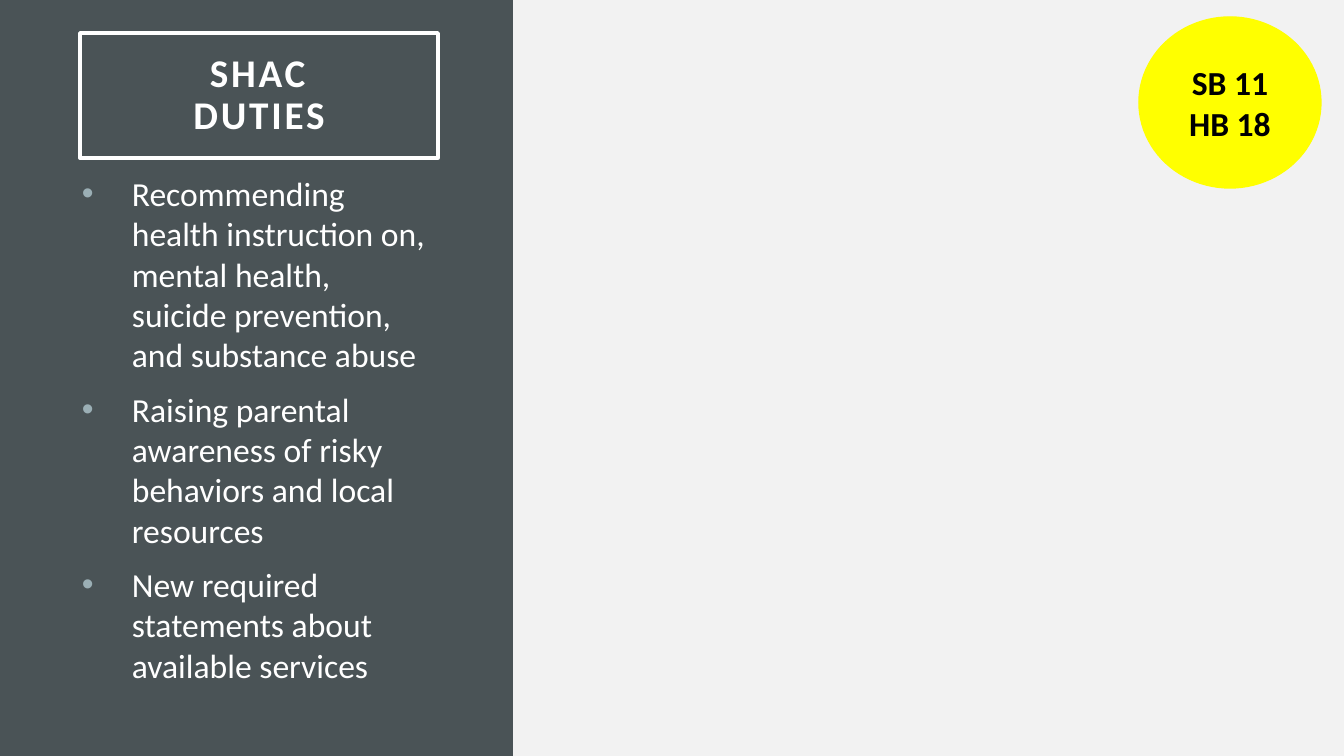
import dataclasses

import pptx
import pptx.dml.color
import pptx.enum.shapes
import pptx.enum.text
import pptx.oxml
import pptx.oxml.ns
import pptx.util

EMU_PER_PX = 914400 / 100.8
SHAPES = pptx.enum.shapes.MSO_SHAPE


def px(length):
    return pptx.util.Emu(round(length * EMU_PER_PX))


@dataclasses.dataclass(frozen=True)
class Theme:
    font: str = "Calibri"
    page: str = "F2F2F2"
    panel: str = "4A5356"
    light: str = "FFFFFF"
    dark: str = "000000"
    bullet: str = "9BAFB5"
    badge: str = "FFFF00"
    title_size: int = 28
    body_size: int = 24


class SlideBuilder:
    """Draws themed elements on the current slide."""

    def __init__(self, deck, theme):
        self.theme = theme
        self.page = deck.slides.add_slide(deck.slide_layouts[6])
        self.paint(self.page.background.fill, theme.page)

    def paint(self, fill, color):
        fill.solid()
        fill.fore_color.rgb = pptx.dml.color.RGBColor.from_string(color)

    def shape(self, kind, bounds, fill=None, line=None, weight=1):
        shape = self.page.shapes.add_shape(kind, *map(px, bounds))
        shape.shadow.inherit = False
        if fill:
            self.paint(shape.fill, fill)
        else:
            shape.fill.background()
        if line:
            self.paint(shape.line.fill, line)
            shape.line.width = pptx.util.Pt(weight)
        else:
            shape.line.fill.background()
        return shape

    def span(self, para, text, size, color, bold=False, spacing=0):
        span = para.add_run()
        span.text = text
        span.font.name = self.theme.font
        span.font.size = pptx.util.Pt(size)
        span.font.bold = bold
        span.font.color.rgb = pptx.dml.color.RGBColor.from_string(color)
        if spacing:
            span.font._element.set("spc", str(spacing * 100))

    def paragraphs(self, frame, count):
        return [frame.paragraphs[0]] + [frame.add_paragraph() for _ in range(count - 1)]

    def center(self, frame, count):
        frame.word_wrap = True
        frame.vertical_anchor = pptx.enum.text.MSO_ANCHOR.MIDDLE
        paras = self.paragraphs(frame, count)
        for para in paras:
            para.alignment = pptx.enum.text.PP_ALIGN.CENTER
        return paras

    def title(self, bounds, lines):
        theme = self.theme
        frame = self.shape(SHAPES.RECTANGLE, bounds, line=theme.light, weight=2.5).text_frame
        frame.margin_left = frame.margin_right = px(20)
        frame.margin_top = frame.margin_bottom = px(20)
        para = self.center(frame, 1)[0]
        para.line_spacing = 0.9
        for index, line in enumerate(lines):
            if index:
                para.add_line_break()
            self.span(para, line, theme.title_size, theme.light, bold=True, spacing=2)

    def badge(self, bounds, lines):
        theme = self.theme
        frame = self.shape(SHAPES.OVAL, bounds, theme.badge, theme.badge).text_frame
        for para, line in zip(self.center(frame, len(lines)), lines):
            self.span(para, line, theme.body_size, theme.dark, bold=True)

    def bullets(self, bounds, items, indent):
        theme = self.theme
        frame = self.page.shapes.add_textbox(*map(px, bounds)).text_frame
        frame.word_wrap = True
        for index, (para, item) in enumerate(zip(self.paragraphs(frame, len(items)), items)):
            properties = para._p.get_or_add_pPr()
            properties.set("marL", str(px(indent)))
            properties.set("indent", str(-px(indent)))
            namespace = pptx.oxml.ns.nsdecls("a")
            for markup in (
                f'<a:buClr {namespace}><a:srgbClr val="{theme.bullet}"/></a:buClr>',
                f'<a:buFont {namespace} typeface="Arial"/>',
                f'<a:buChar {namespace} char="•"/>',
            ):
                properties.append(pptx.oxml.parse_xml(markup))
            para.space_before = pptx.util.Pt(10 if index else 0)
            self.span(para, item, theme.body_size, theme.light)


def main():
    deck = pptx.Presentation()
    deck.slide_width, deck.slide_height = px(1344), px(756)
    theme = Theme()
    builder = SlideBuilder(deck, theme)
    builder.shape(SHAPES.RECTANGLE, (0, 0, 513, 756), theme.panel)
    builder.title((80, 33, 358, 125), ["SHAC", "DUTIES"])
    builder.bullets(
        (72, 168, 370, 499),
        [
            "Recommending health instruction on, mental health, suicide prevention, and substance abuse",
            "Raising parental awareness of risky behaviors and local resources",
            "New required statements about available services",
        ],
        indent=50,
    )
    builder.badge((1139, 17, 182, 171), ["SB 11", "HB 18"])
    deck.save("out.pptx")


if __name__ == "__main__":
    main()
